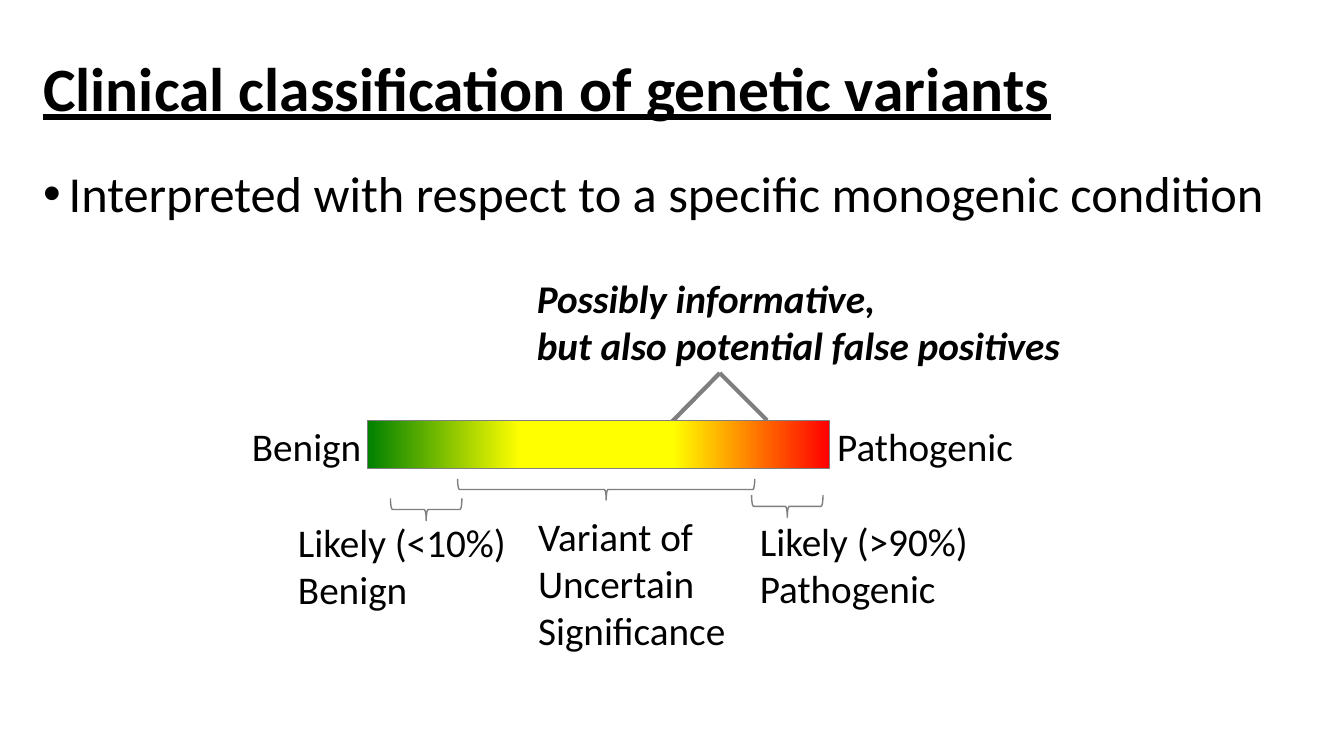
from lxml import etree
from pptx import Presentation
from pptx import util as u
from pptx.dml.color import RGBColor
from pptx.enum import shapes, text
from pptx.oxml import ns

COLOURS = {"ink": "000000", "line": "7F7F7F", "benign": "008000",
           "uncertain": "FFFF00", "pathogenic": "FF0000"}


def add_text(lines, place, size, wrap=False, spacing=None, bullet=False, **style):
    box = page.shapes.add_textbox(*map(u.Cm, place))
    frame = box.text_frame
    frame.word_wrap = wrap
    frame.auto_size = text.MSO_AUTO_SIZE.NONE if wrap else text.MSO_AUTO_SIZE.SHAPE_TO_FIT_TEXT
    for number, line in enumerate(lines):
        para = frame.add_paragraph() if number else frame.paragraphs[0]
        para.add_run().text = line
        if bullet:
            props = para._p.get_or_add_pPr()
            props.set("marL", str(u.Cm(0.64)))
            props.set("indent", str(-u.Cm(0.64)))
            etree.SubElement(props, ns.qn("a:buFont"), typeface="Arial")
            etree.SubElement(props, ns.qn("a:buChar"), char="•")
        if spacing:
            para.line_spacing = spacing
        font = para.runs[0].font
        for name, value in {"name": "Calibri", "size": u.Pt(size), **style}.items():
            setattr(font, name, value)
        font.color.rgb = RGBColor.from_string(COLOURS["ink"])
    return frame


def set_line(item, width):
    item.line.color.rgb = RGBColor.from_string(COLOURS["line"])
    item.line.width = u.Pt(width)


deck = Presentation()
deck.slide_width, deck.slide_height = u.Cm(33.87), u.Cm(19.05)
page = deck.slides.add_slide(deck.slide_layouts[6])

# Title and bullet
title = add_text(["Clinical classification of genetic variants"], (0.84, 0.46, 32.56, 3.68), 44,
                 wrap=True, spacing=0.9, bold=True, underline=True)
title.vertical_anchor = text.MSO_ANCHOR.MIDDLE
add_text(["Interpreted with respect to a specific monogenic condition"],
         (0.84, 4.14, 32.56, 13.2), 36, wrap=True, spacing=0.9, bullet=True)

# Callout with its two pointer lines
add_text(["Possibly informative,", "but also potential false positives"],
         (13.28, 6.78, 13.84, 2.64), 28, bold=True, italic=True)
for end_x, end_y in [(16.92, 10.64), (19.33, 10.59)]:
    pointer = page.shapes.add_connector(
        shapes.MSO_CONNECTOR.STRAIGHT, u.Cm(18.14), u.Cm(9.4), u.Cm(end_x), u.Cm(end_y))
    set_line(pointer, 3)
    etree.SubElement(pointer._element.spPr, ns.qn("a:effectLst"))

# Braces below the scale, turned to point down
for place in [(15.01, 8.59, 0.53, 7.49), (19.56, 11.86, 0.56, 1.8), (10.46, 11.94, 0.56, 1.8)]:
    brace = page.shapes.add_shape(shapes.MSO_SHAPE.RIGHT_BRACE, *map(u.Cm, place))
    brace.rotation = 90
    brace.shadow.inherit = False
    brace.fill.background()
    set_line(brace, 1)

# Class labels
for lines, place in [
    (["Benign"], (6.1, 10.52, 3.3, 1.45)),
    (["Pathogenic"], (20.85, 10.52, 4.98, 1.45)),
    (["Likely (<10%)", "Benign"], (7.26, 12.93, 5.82, 2.64)),
    (["Likely (>90%)", "Pathogenic"], (18.9, 12.9, 5.82, 2.64)),
    (["Variant of", "Uncertain", "Significance"], (13.31, 12.78, 5.28, 3.84)),
]:
    add_text(lines, place, 28)

# Colour scale from benign to pathogenic
scale = page.shapes.add_shape(
    shapes.MSO_SHAPE.RECTANGLE, *map(u.Cm, (9.27, 10.59, 11.63, 1.22)))
scale.shadow.inherit = False
set_line(scale, 0.5)
scale.fill.gradient()
scale.fill.gradient_angle = 0
stops = scale._element.spPr.find(".//" + ns.qn("a:gsLst"))
for stop in list(stops):
    stops.remove(stop)
for percent, name in [(0, "benign"), (33, "uncertain"), (66, "uncertain"), (100, "pathogenic")]:
    stop = etree.SubElement(stops, ns.qn("a:gs"), pos=str(percent * 1000))
    etree.SubElement(stop, ns.qn("a:srgbClr"), val=COLOURS[name])

deck.save("out.pptx")
